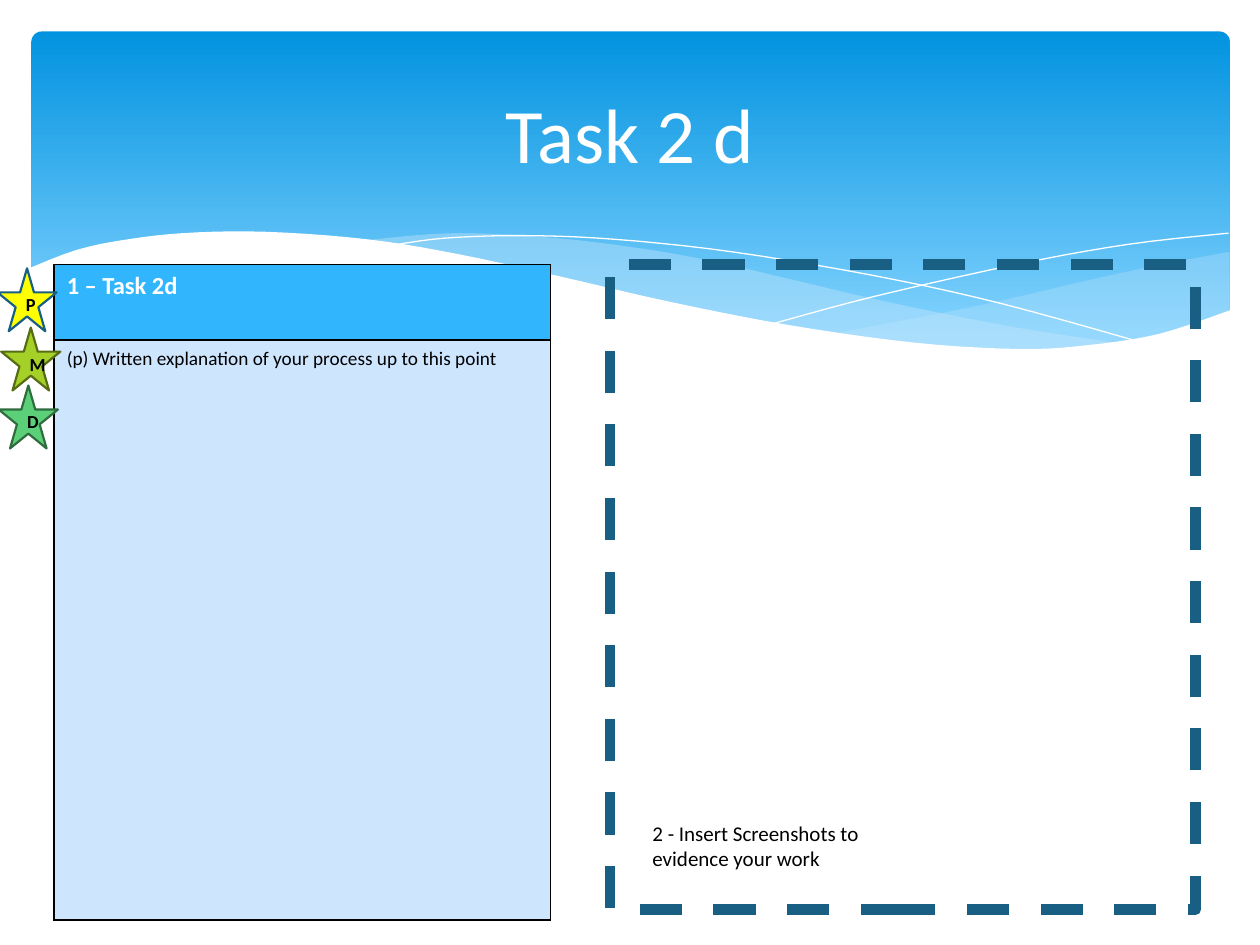
from pptx import Presentation
from pptx.dml.color import RGBColor
from pptx.enum.dml import MSO_LINE_DASH_STYLE
from pptx.enum.shapes import MSO_SHAPE
from pptx.enum.text import MSO_ANCHOR, PP_ALIGN
from pptx.oxml import parse_xml
from pptx.oxml.ns import nsdecls
from pptx.util import Inches, Pt

FONT = "Calibri"
COLUMNS, ROWS = 100, 75
RIGHT_SWELL = [
    [(97.5, 20), (92.1, 21), (86.1, 22.3), (77.9, 24.2), (66.1, 26.5)],
    [(66.1, 26.5), (73.2, 27.4), (80.3, 27.8), (87.2, 27.4), (92.8, 26.3), (97.6, 24.7)],
    [(97.6, 24.7), (97.6, 20)],
]
LONG_SWELL = [
    [(89.3, 27.3), (80.7, 26), (70.6, 24), (62.9, 22.2), (56.9, 20.8), (51.4, 19.8),
     (44.2, 18.9), (36.1, 18.5), (28.6, 19.1)],
    [(28.6, 19.1), (36.2, 20.3), (44.9, 22.2), (56.6, 24.8), (65, 26.4), (73.6, 27.5),
     (81.8, 27.8), (89.3, 27.3)],
]
FALLING_LINE = [[(30.9, 19.5), (35.3, 18.9), (41.6, 18.7), (48.9, 19), (58.2, 20),
                 (69.5, 21.9), (79.5, 24.1), (90.7, 27.2)]]
RISING_LINE = [[(61.3, 25.7), (69.5, 23.5), (80.6, 21), (89.5, 19.4), (97.5, 18.5)]]
WHITE_WAVE = [
    [(97.7, 24.6), (92, 26.5), (86.3, 27.4), (80.9, 27.7), (72.6, 27.2), (62.6, 25.8),
     (52.9, 23.9), (44.7, 22), (36.5, 20.2), (29.2, 19), (21.1, 18.4), (14.6, 18.5),
     (9.5, 19.1), (5.9, 19.9), (2.3, 21.3)],
    [(2.3, 21.3), (2.3, 32.9)],
    [(2.3, 32.9), (97.7, 32.9)],
]
STARS = [
    ("P", -0.2, 21.3, "FFFF00", "195F84"),
    ("M", 0.1, 26, "A5D028", "566D15"),
    ("D", -0.1, 30.6, "5BD078", "2F6D3F"),
]


def grid(*lengths):
    return [Inches(length * 10 / COLUMNS) for length in lengths]


def colour(value):
    return RGBColor.from_string(value)


def write(text_frame, text, size, color="000000", bold=False,
          align=PP_ALIGN.LEFT, anchor=MSO_ANCHOR.TOP):
    text_frame.word_wrap = True
    text_frame.vertical_anchor = anchor
    paragraph = text_frame.paragraphs[0]
    paragraph.alignment = align
    run = paragraph.add_run()
    run.text = text
    run.font.name = FONT
    run.font.size = Pt(size)
    run.font.bold = bold
    run.font.color.rgb = colour(color)


def style(shape, fill=None, alpha=None, line=None, width=0):
    shape.shadow.inherit = False
    if fill:
        shape.fill.solid()
        shape.fill.fore_color.rgb = colour(fill)
    else:
        shape.fill.background()
    if alpha:
        color_element = shape.fill._xPr.solidFill[0]
        color_element.append(parse_xml(f'<a:alpha {nsdecls("a")} val="{alpha * 1000}"/>'))
    if line:
        shape.line.color.rgb = colour(line)
        shape.line.width = Pt(width)
    else:
        shape.line.fill.background()


def smooth(points, steps=5):
    padded = [points[0], *points, points[-1]]
    curve = [points[0]]
    for before, start, end, after in zip(padded, padded[1:], padded[2:], padded[3:]):
        for step in range(1, steps + 1):
            t = step / steps
            curve.append(tuple(
                b + t / 2 * (c - a + t * (2 * a - 5 * b + 4 * c - d + t * (3 * b - a - 3 * c + d)))
                for a, b, c, d in zip(before, start, end, after)
            ))
    return curve


def add_wave(slide, curves, closed=True, **look):
    points = [grid(*point) for curve in curves for point in smooth(curve)]
    builder = slide.shapes.build_freeform(*points[0])
    builder.add_line_segments(points[1:], close=closed)
    style(builder.convert_to_shape(), **look)


def add_banner(slide):
    banner = slide.shapes.add_shape(MSO_SHAPE.ROUNDED_RECTANGLE, *grid(2.5, 2.5, 95.1, 27))
    banner.adjustments[0] = 0.03
    style(banner)
    banner.fill.gradient()
    banner.fill.gradient_angle = 270
    stops = zip(banner.fill.gradient_stops, (0, 0.9), ("0293E0", "83D3FE"))
    for stop, position, color in stops:
        stop.position = position
        stop.color.rgb = colour(color)


def add_text(slide, box, text, **format):
    text_box = slide.shapes.add_textbox(*grid(*box))
    write(text_box.text_frame, text, **format)


def fill_cell(cell, text, fill, **format):
    properties = cell._tc.get_or_add_tcPr()
    for side in ("lnL", "lnR", "lnT", "lnB"):
        properties.append(parse_xml(
            f'<a:{side} {nsdecls("a")} w="{Pt(1)}"><a:solidFill>'
            f'<a:srgbClr val="000000"/></a:solidFill></a:{side}>'
        ))
    cell.fill.solid()
    cell.fill.fore_color.rgb = colour(fill)
    write(cell.text_frame, text, **format)


def add_task_table(slide):
    table = slide.shapes.add_table(2, 1, *grid(4.3, 21, 39.4, 52)).table
    for row, height in zip(table.rows, grid(6, 46)):
        row.height = height
    fill_cell(table.cell(0, 0), "1 – Task 2d", "31B6FD", size=14, color="FFFFFF", bold=True)
    fill_cell(table.cell(1, 0), "(p) Written explanation of your process up to this point",
              "CEE5FE", size=11)


def add_screenshot_frame(slide):
    frame = slide.shapes.add_shape(MSO_SHAPE.RECTANGLE, *grid(48.4, 21, 46.5, 51.2))
    style(frame, line="195F84", width=6)
    frame.line.dash_style = MSO_LINE_DASH_STYLE.DASH


def add_star(slide, letter, left, top, fill, line):
    star = slide.shapes.add_shape(MSO_SHAPE.STAR_5_POINT, *grid(left, top, 4.7, 5))
    style(star, fill=fill, line=line, width=1.25)
    write(star.text_frame, letter, size=10.5, bold=True,
          align=PP_ALIGN.CENTER, anchor=MSO_ANCHOR.MIDDLE)


def main():
    presentation = Presentation()
    presentation.slide_width, presentation.slide_height = grid(COLUMNS, ROWS)
    slide = presentation.slides.add_slide(presentation.slide_layouts[6])
    add_banner(slide)
    add_wave(slide, RIGHT_SWELL, fill="C6E7FC", alpha=29)
    add_wave(slide, LONG_SWELL, fill="C6E7FC", alpha=40)
    for curve in (FALLING_LINE, RISING_LINE):
        add_wave(slide, curve, closed=False, line="FFFFFF")
    add_wave(slide, WHITE_WAVE, fill="FFFFFF")
    add_text(slide, (5, 3.7, 90, 13.7), "Task 2 d", size=44, color="FFFFFF",
             align=PP_ALIGN.CENTER, anchor=MSO_ANCHOR.MIDDLE)
    add_task_table(slide)
    add_screenshot_frame(slide)
    add_text(slide, (50.8, 64.6, 23.6, 5), "2 - Insert Screenshots to evidence your work", size=12)
    for star in STARS:
        add_star(slide, *star)
    presentation.save("out.pptx")


if __name__ == "__main__":
    main()
